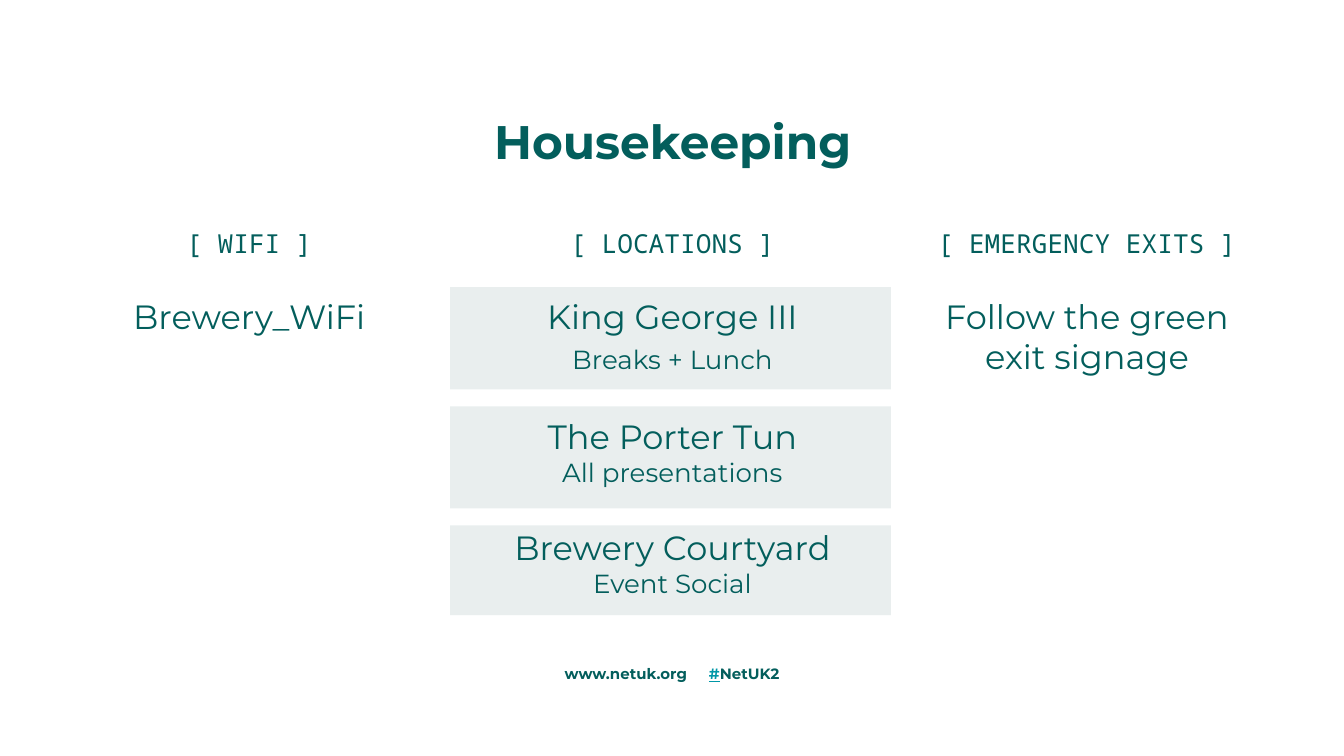
from dataclasses import dataclass

from lxml import etree
from pptx import Presentation
from pptx.dml.color import RGBColor
from pptx.enum.shapes import MSO_SHAPE
from pptx.enum.text import MSO_ANCHOR, MSO_AUTO_SIZE, PP_ALIGN
from pptx.oxml.ns import qn
from pptx.util import Cm, Pt

RECTANGLE = MSO_SHAPE.RECTANGLE
TOP, MIDDLE = MSO_ANCHOR.TOP, MSO_ANCHOR.MIDDLE
NO_AUTOFIT = MSO_AUTO_SIZE.NONE
LEFT, CENTER, RIGHT = PP_ALIGN.LEFT, PP_ALIGN.CENTER, PP_ALIGN.RIGHT


@dataclass(frozen=True)
class TextStyle:
    size: float
    font: str = "Montserrat"
    color: str = "035E5C"
    bold: bool = False
    underline: bool = False


@dataclass(frozen=True)
class Theme:
    title: TextStyle = TextStyle(25.2, bold=True)
    label: TextStyle = TextStyle(14, font="Noto Sans Mono")
    name: TextStyle = TextStyle(18)
    detail: TextStyle = TextStyle(14)
    footer: TextStyle = TextStyle(8, bold=True)
    hash_sign: TextStyle = TextStyle(8, color="0097A7", bold=True, underline=True)
    band: str = "376866"
    band_opacity: int = 11
    inset: float = 0.25


class SlideBuilder:
    """Draw styled elements on the current slide."""

    def __init__(self, slide, theme):
        self.slide = slide
        self.theme = theme

    def fill_text(self, shape, paragraphs, align=CENTER, anchor=TOP, inset=0.0):
        frame = shape.text_frame
        frame.word_wrap = True
        frame.auto_size = NO_AUTOFIT
        frame.vertical_anchor = anchor
        frame.margin_left = frame.margin_right = Cm(inset)
        frame.margin_top = frame.margin_bottom = Cm(inset)
        for index, (space_before, runs) in enumerate(paragraphs):
            paragraph = frame.add_paragraph() if index else frame.paragraphs[0]
            paragraph.alignment = align
            paragraph.space_before = Pt(space_before)
            for text, style in runs:
                run = paragraph.add_run()
                run.text = text
                run.font.name = style.font
                run.font.size = Pt(style.size)
                run.font.bold = style.bold
                run.font.underline = style.underline
                run.font.color.rgb = RGBColor.from_string(style.color)

    def title(self, text, left, top, width, height):
        shape = self.slide.shapes.title
        shape.left, shape.top = Cm(left), Cm(top)
        shape.width, shape.height = Cm(width), Cm(height)
        self.fill_text(shape, [(0, [(text, self.theme.title)])], inset=self.theme.inset)

    def band(self, left, top, width, height):
        shape = self.slide.shapes.add_shape(
            RECTANGLE, Cm(left), Cm(top), Cm(width), Cm(height)
        )
        shape.shadow.inherit = False
        shape.line.fill.background()
        shape.fill.solid()
        shape.fill.fore_color.rgb = RGBColor.from_string(self.theme.band)
        color = shape.element.spPr.find(qn("a:solidFill"))[0]
        alpha = etree.SubElement(color, qn("a:alpha"))
        alpha.set("val", str(self.theme.band_opacity * 1000))

    def text_box(self, left, top, width, height, paragraphs, **options):
        shape = self.slide.shapes.add_textbox(
            Cm(left), Cm(top), Cm(width), Cm(height)
        )
        self.fill_text(shape, paragraphs, **options)

    def column(self, left, width, height, label, lines):
        paragraphs = [(0, [(label, self.theme.label)])]
        paragraphs += [(space, [(text, style)]) for space, text, style in lines]
        self.text_box(left, 4.04, width, height, paragraphs, inset=self.theme.inset)

    def footer(self, left, width, runs, align):
        self.text_box(left, 12.27, width, 0.94, [(0, runs)], align=align, anchor=MIDDLE)


def main():
    theme = Theme()
    presentation = Presentation()
    presentation.slide_width = Cm(25.4)
    presentation.slide_height = Cm(14.29)
    slide = presentation.slides.add_slide(presentation.slide_layouts[5])
    builder = SlideBuilder(slide, theme)

    builder.title("Housekeeping", 1.4, 1.88, 22.63, 1.6)
    for row, height in enumerate((1.93, 1.93, 1.7)):
        builder.band(8.51, 5.43 + row * 2.25, 8.33, height)

    builder.column(0.71, 8, 2.64, "[ WIFI ]", [(20, "Brewery_WiFi", theme.name)])
    builder.column(8.71, 8, 7.7, "[ LOCATIONS ]", [
        (20, "King George III", theme.name),
        (4, "Breaks + Lunch", theme.detail),
        (22, "The Porter Tun", theme.name),
        (0, "All presentations", theme.detail),
        (21, "Brewery Courtyard", theme.name),
        (0, "Event Social", theme.detail),
    ])
    builder.column(16.38, 8.33, 3.43, "[ EMERGENCY EXITS ]", [
        (20, "Follow the green", theme.name),
        (0, "exit signage", theme.name),
    ])

    builder.footer(5.94, 7.05, [("www.netuk.org", theme.footer)], RIGHT)
    builder.footer(
        13.4, 6.06, [("#", theme.hash_sign), ("NetUK2", theme.footer)], LEFT
    )
    presentation.save("out.pptx")


if __name__ == "__main__":
    main()
